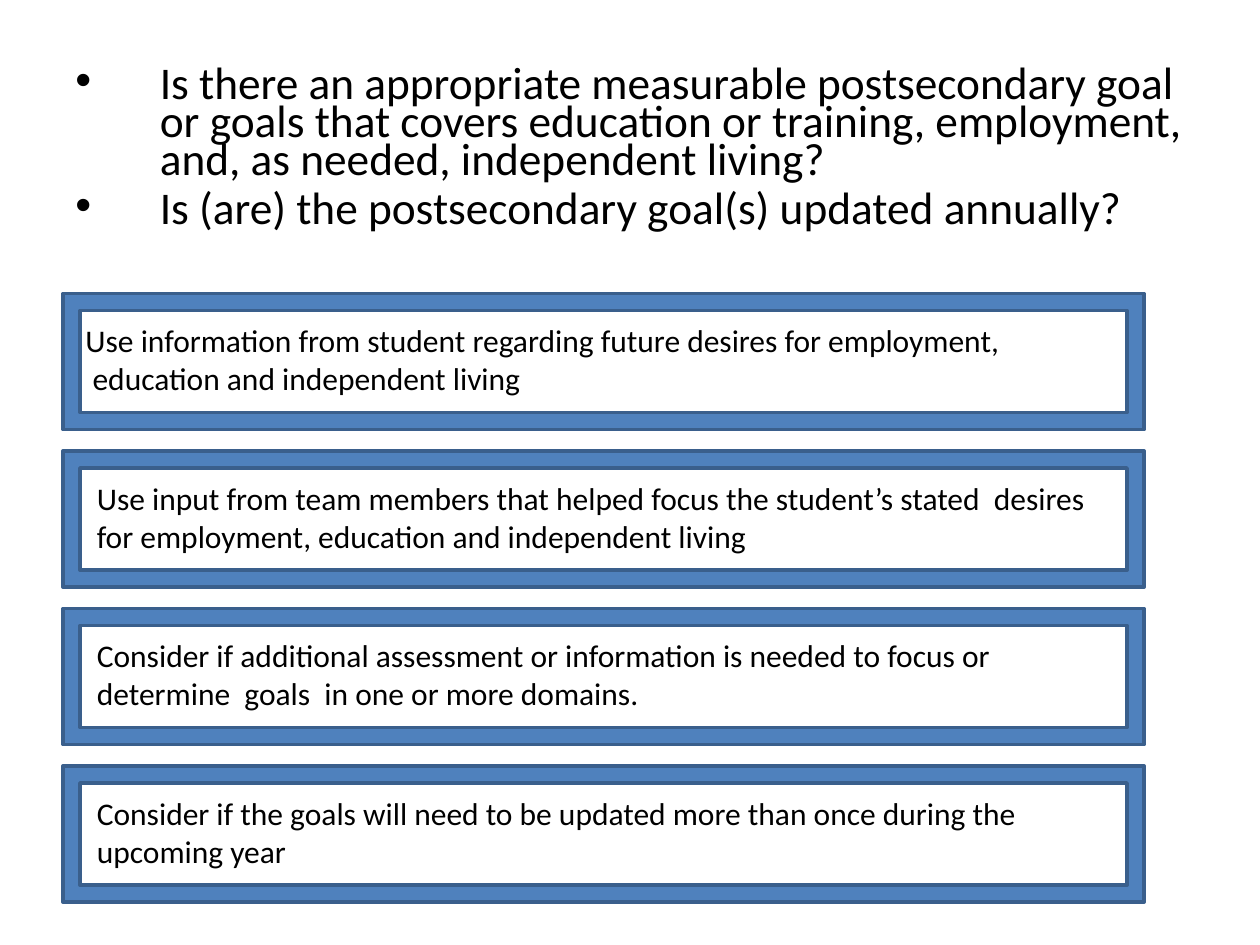
from lxml.etree import SubElement
from pptx import Presentation
from pptx.dml.color import RGBColor as RGB
from pptx.enum.shapes import MSO_SHAPE as SHAPE
from pptx.oxml.ns import qn
from pptx.util import Inches, Pt

COLORS = {"text": "000000", "frame": "4F81BD", "edge": "3A5F8C"}

QUESTIONS = [
    "Is there an appropriate measurable postsecondary goal or goals that covers "
    "education or training, employment, and, as needed, independent living?",
    "Is (are) the postsecondary goal(s) updated annually?",
]

STEPS = [
    ["Use information from student regarding future desires for employment,",
     " education and independent living"],
    ["Use input from team members that helped focus the student’s stated  desires "
     "for employment, education and independent living"],
    ["Consider if additional assessment or information is needed to focus or "
     "determine  goals  in one or more domains."],
    ["Consider if the goals will need to be updated more than once during the "
     "upcoming year"],
]


def add_text(s, box, lines, size, indent=0, bullet=None, **formats):
    tf = s.shapes.add_textbox(*map(Inches, box)).text_frame
    tf.word_wrap = True
    for i, line in enumerate(lines):
        p = tf.paragraphs[0] if i == 0 else tf.add_paragraph()
        for name, value in formats.items():
            setattr(p, name, value)
        r = p.add_run()
        r.text = line
        for name, value in {"size": Pt(size), "name": "Calibri"}.items():
            setattr(r.font, name, value)
        r.font.color.rgb = RGB.from_string(COLORS["text"])
        pPr = p._p.get_or_add_pPr()
        if indent:
            pPr.set("marL", str(Inches(indent)))
            pPr.set("indent", str(-Inches(indent)))
        if bullet:
            SubElement(pPr, qn("a:buFont"), typeface="Arial")
            SubElement(pPr, qn("a:buChar"), char=bullet)


def add_questions(s, box):
    add_text(s, box, QUESTIONS, 25.9, indent=0.67, bullet="•",
             line_spacing=0.7, space_before=Pt(5.8))


def add_frame(s, box):
    sp = s.shapes.add_shape(SHAPE.FRAME, *map(Inches, box))
    sp.shadow.inherit = False
    sp.fill.solid()
    sp.fill.fore_color.rgb = RGB.from_string(COLORS["frame"])
    sp.line.color.rgb = RGB.from_string(COLORS["edge"])
    sp.line.width = Pt(2)


def add_steps(s, box, pitch=1.25):
    left, top, width, height = box
    for i, lines in enumerate(STEPS):
        y = top + i * pitch
        add_frame(s, (left, y, width, height))
        hanging = len(lines) > 1
        inset, indent = (0.08, 0.3) if hanging else (0.17, 0)
        add_text(s, (left + inset, y + 0.17, 8.25, 0.71), lines, 18, indent)


def main():
    prs = Presentation()
    prs.slide_width, prs.slide_height = Inches(10), Inches(7.5)
    s = prs.slides.add_slide(prs.slide_layouts[6])
    add_questions(s, (0.5, 0.5, 9.25, 1.42))
    add_steps(s, (0.5, 2.33, 8.58, 1.08))
    prs.save("out.pptx")


if __name__ == "__main__":
    main()
